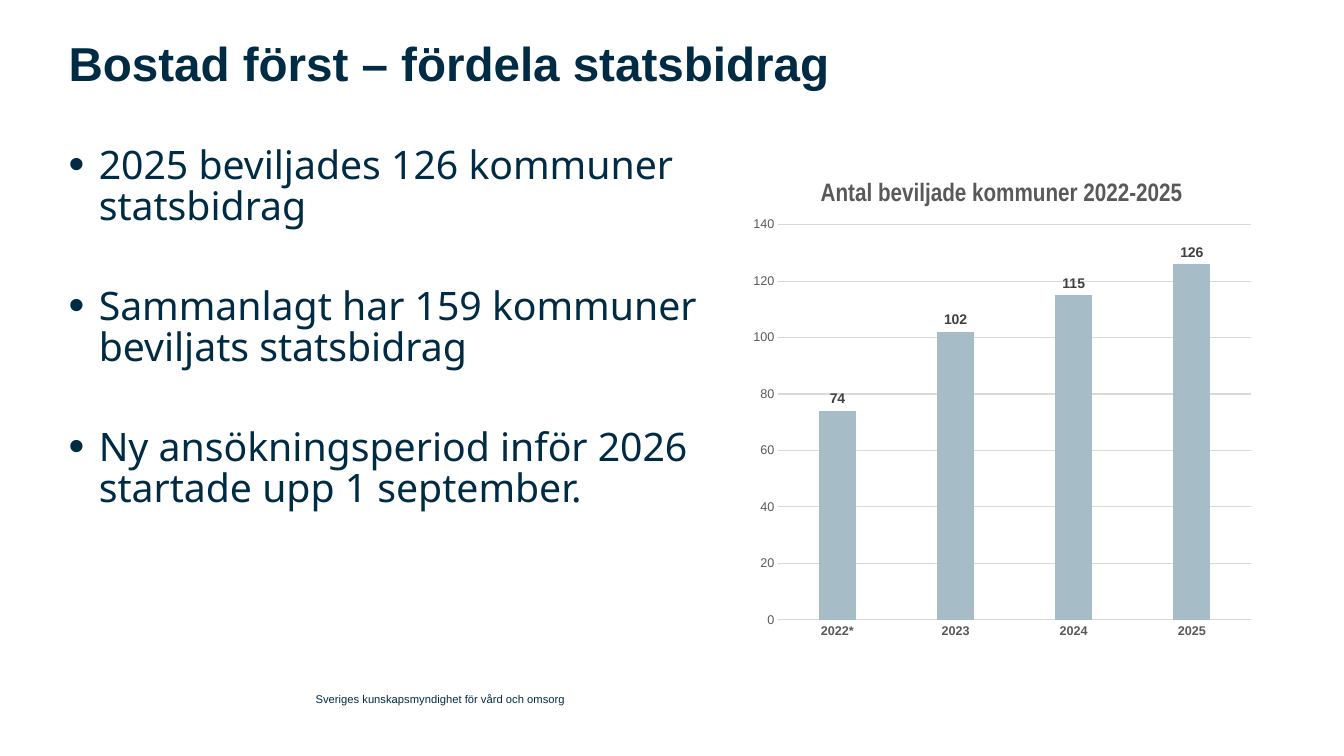
"""Build a slide on state grants for Housing First with a column chart."""
from dataclasses import dataclass

from lxml import etree
from pptx import Presentation
from pptx.chart.chart import Chart
from pptx.chart.data import CategoryChartData
from pptx.dml.color import RGBColor
from pptx.enum.chart import XL_CHART_TYPE, XL_LABEL_POSITION, XL_TICK_MARK
from pptx.enum.text import MSO_ANCHOR
from pptx.oxml import parse_xml
from pptx.oxml.ns import nsdecls, qn
from pptx.slide import Slide
from pptx.text.text import Font
from pptx.util import Inches, Pt

NAVY = RGBColor(0x00, 0x2B, 0x45)
BLUE_GREY = RGBColor(0xA6, 0xBC, 0xC6)
GRID_GREY = RGBColor(0xD9, 0xD9, 0xD9)
AXIS_GREY = RGBColor(0x59, 0x59, 0x59)
LABEL_GREY = RGBColor(0x40, 0x40, 0x40)
COLUMNS = XL_CHART_TYPE.COLUMN_CLUSTERED
OUTSIDE_END = XL_LABEL_POSITION.OUTSIDE_END
NO_TICKS = XL_TICK_MARK.NONE
TOP, MIDDLE = MSO_ANCHOR.TOP, MSO_ANCHOR.MIDDLE

GRANTED = {"2022*": 74, "2023": 102, "2024": 115, "2025": 126}
PLOT_LAYOUT = {"x": 0.07, "y": 0.13, "w": 0.91, "h": 0.81}


@dataclass(frozen=True)
class TextBlock:
    left: float
    top: float
    width: float
    height: float
    lines: tuple[str, ...]
    size: float
    font: str = "Arial"
    bold: bool = False
    anchor: MSO_ANCHOR = TOP
    bulleted: bool = False


BLOCKS = (
    TextBlock(0.68, 0.34, 11.58, 1.42, ("Bostad först – fördela statsbidrag",), 34, bold=True),
    TextBlock(3.13, 6.79, 5.91, 0.29, ("Sveriges kunskapsmyndighet för vård och omsorg",), 8, anchor=MIDDLE),
    TextBlock(
        0.68, 1.45, 6.26, 4.84,
        (
            "2025 beviljades 126 kommuner statsbidrag",
            "Sammanlagt har 159 kommuner beviljats statsbidrag",
            "Ny ansökningsperiod inför 2026 startade upp 1 september.",
        ),
        28, font="Noto Sans", bulleted=True,
    ),
)


def set_font(font: Font, size: float, color: RGBColor, name: str = "Arial", bold: bool = False) -> None:
    for attribute, value in {"size": Pt(size), "name": name, "bold": bold}.items():
        setattr(font, attribute, value)
    font.color.rgb = color


def add_text(slide: Slide, block: TextBlock) -> None:
    area = (Inches(v) for v in (block.left, block.top, block.width, block.height))
    frame = slide.shapes.add_textbox(*area).text_frame
    frame_format = {
        "word_wrap": True, "vertical_anchor": block.anchor,
        "margin_left": 0, "margin_right": 0, "margin_top": 0, "margin_bottom": 0,
    }
    for attribute, value in frame_format.items():
        setattr(frame, attribute, value)
    frame.text = "\n".join(block.lines)
    for paragraph in frame.paragraphs:
        if block.bulleted:
            properties = paragraph._p.get_or_add_pPr()
            properties.set("marL", str(Inches(0.3)))
            properties.set("indent", str(-Inches(0.3)))
            paragraph.line_spacing = 0.88
            paragraph.space_after = Pt(41.6)
            etree.SubElement(properties, qn("a:buSzPct")).set("val", "115000")
            etree.SubElement(properties, qn("a:buFont")).set("typeface", "Arial")
            etree.SubElement(properties, qn("a:buChar")).set("char", "•")
        set_font(paragraph.font, block.size, NAVY, block.font, block.bold)
        set_font(paragraph.runs[0].font, block.size, NAVY, block.font, block.bold)


def place_plot(chart: Chart) -> None:
    plot_area = chart._chartSpace.chart.plotArea
    for existing in plot_area.findall(qn("c:layout")):
        plot_area.remove(existing)
    modes = '<c:layoutTarget val="inner"/><c:xMode val="edge"/><c:yMode val="edge"/>'
    sizes = "".join(f'<c:{key} val="{value}"/>' for key, value in PLOT_LAYOUT.items())
    layout = f'<c:layout {nsdecls("c")}><c:manualLayout>{modes}{sizes}</c:manualLayout></c:layout>'
    plot_area.insert(0, parse_xml(layout))


def add_grant_chart(slide: Slide) -> None:
    data = CategoryChartData()
    data.categories = list(GRANTED)
    data.add_series("Series 1", list(GRANTED.values()))
    area = (Inches(v) for v in (7.36, 1.6, 5.15, 4.84))
    chart = slide.shapes.add_chart(COLUMNS, *area, data).chart
    set_font(chart.font, 10, AXIS_GREY)
    chart.has_legend = False
    heading = chart.chart_title.text_frame
    heading.text = "Antal beviljade kommuner 2022-2025"
    set_font(heading.paragraphs[0].runs[0].font, 18, AXIS_GREY, "Arial Narrow", True)

    years, counts = chart.category_axis, chart.value_axis
    for axis, bold in ((years, True), (counts, False)):
        axis.major_tick_mark = axis.minor_tick_mark = NO_TICKS
        set_font(axis.tick_labels.font, 9, AXIS_GREY, bold=bold)
    for attribute, value in {"minimum_scale": 0, "maximum_scale": 140, "major_unit": 20}.items():
        setattr(counts, attribute, value)
    counts.format.line.fill.background()
    for line in (years.format.line, counts.major_gridlines.format.line):
        line.width = Pt(0.75)
        line.color.rgb = GRID_GREY

    plot = chart.plots[0]
    plot_format = {"gap_width": 219, "overlap": -27, "vary_by_categories": False, "has_data_labels": True}
    for attribute, value in plot_format.items():
        setattr(plot, attribute, value)
    plot.data_labels.show_value = True
    plot.data_labels.position = OUTSIDE_END
    set_font(plot.data_labels.font, 10, LABEL_GREY, bold=True)
    bars = plot.series[0].format.fill
    bars.solid()
    bars.fore_color.rgb = BLUE_GREY
    place_plot(chart)


def main() -> None:
    presentation = Presentation()
    presentation.slide_width = Inches(13.33)
    presentation.slide_height = Inches(7.5)
    slide = presentation.slides.add_slide(presentation.slide_layouts[6])
    for block in BLOCKS:
        add_text(slide, block)
    add_grant_chart(slide)
    presentation.save("out.pptx")


if __name__ == "__main__":
    main()
